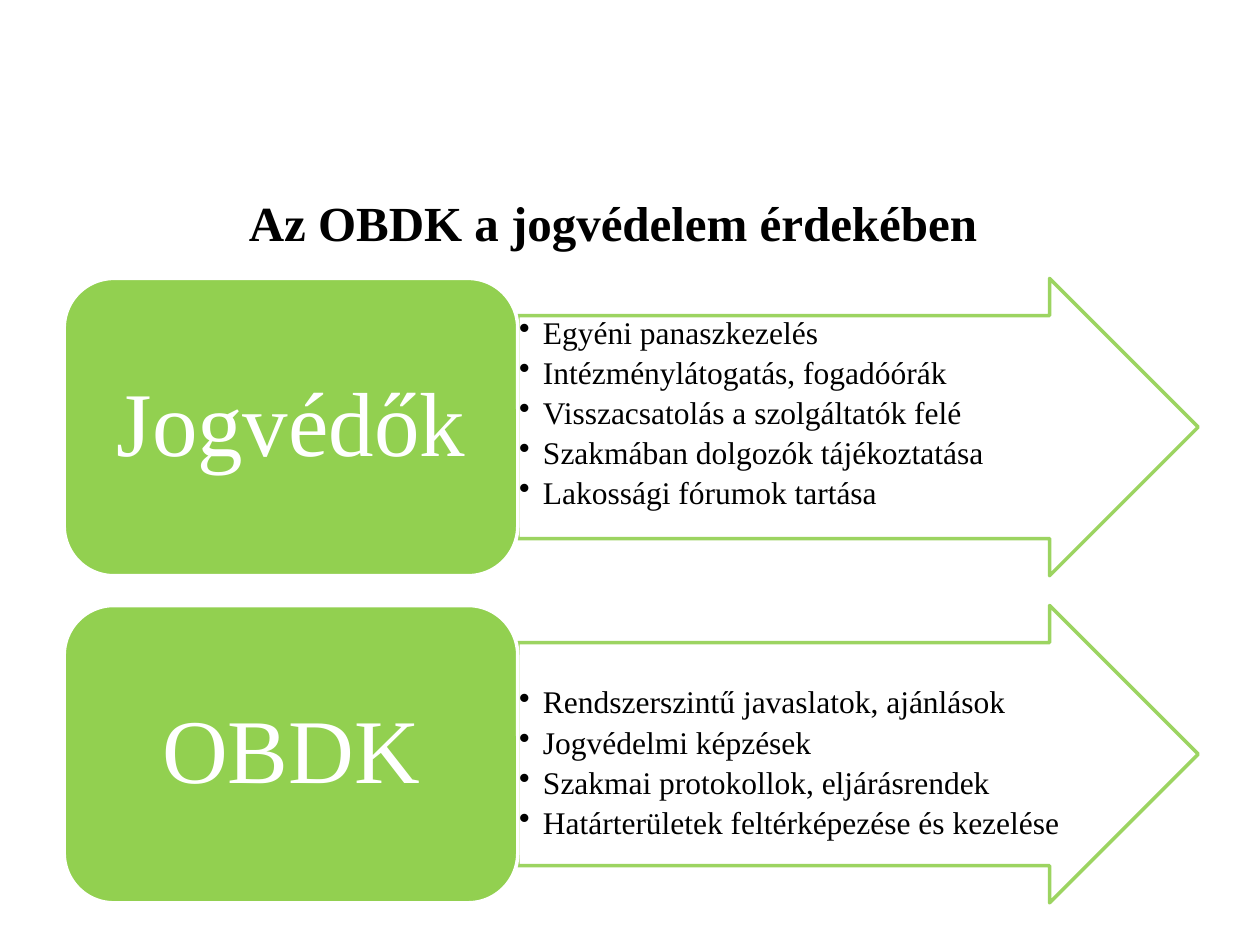
import pptx
import pptx.dml.color
import pptx.enum.shapes
import pptx.enum.text
import pptx.util
from lxml import etree
from pptx.oxml.ns import qn

RGBColor = pptx.dml.color.RGBColor
GREEN = RGBColor(0x92, 0xD0, 0x50)
WHITE = RGBColor(0xFF, 0xFF, 0xFF)
BLACK = RGBColor(0x00, 0x00, 0x00)

SHAPE = pptx.enum.shapes.MSO_SHAPE
ALIGN = pptx.enum.text.PP_ALIGN
ANCHOR = pptx.enum.text.MSO_ANCHOR

# The grid has 100 columns and 75 rows, each a tenth of an inch
UNIT = 0.1
LEFT, TOP = 5.1, 22.1
LABEL_WIDTH, ARROW_WIDTH, HEIGHT = 36, 54, 23.6
PITCH = 1.1 * HEIGHT

# Label, list items, inset above the list in inches
GROUPS = [
    ("Jogvédők", ["Egyéni panaszkezelés",
                  "Intézménylátogatás, fogadóórák",
                  "Visszacsatolás a szolgáltatók felé",
                  "Szakmában dolgozók tájékoztatása",
                  "Lakossági fórumok tartása"], 0.01),
    ("OBDK", ["Rendszerszintű javaslatok, ajánlások",
              "Jogvédelmi képzések",
              "Szakmai protokollok, eljárásrendek",
              "Határterületek feltérképezése és kezelése"], 0.35),
]


class SlideBuilder:
    font = "Times New Roman"

    def __init__(self, deck):
        self.page = deck.slides.add_slide(deck.slide_layouts[5])

    def place(self, *cells):
        return [pptx.util.Inches(cell * UNIT) for cell in cells]

    def add_span(self, para, text, size, color, bold=False):
        span = para.add_run()
        span.text = text
        span.font.name = self.font
        span.font.size = pptx.util.Pt(size)
        span.font.bold = bold
        span.font.color.rgb = color

    def title(self, text, *cells):
        box = self.page.shapes.title
        box.left, box.top, box.width, box.height = self.place(*cells)
        box.text_frame.vertical_anchor = ANCHOR.MIDDLE
        para = box.text_frame.paragraphs[0]
        para.alignment = ALIGN.CENTER
        self.add_span(para, text, 28, BLACK, bold=True)

    def block(self, kind, cells, fill, line, anchor, insets):
        box = self.page.shapes.add_shape(kind, *self.place(*cells))
        box.shadow.inherit = False
        box.fill.solid()
        box.fill.fore_color.rgb = fill
        box.line.color.rgb = line
        box.line.width = pptx.util.Pt(2)
        frame = box.text_frame
        frame.word_wrap = True
        frame.vertical_anchor = anchor
        (frame.margin_left, frame.margin_top,
         frame.margin_right, frame.margin_bottom) = map(pptx.util.Inches, insets)
        return box

    def label(self, text, *cells):
        box = self.block(SHAPE.ROUNDED_RECTANGLE, cells, GREEN, WHITE,
                         ANCHOR.MIDDLE, (0.22, 0.11, 0.22, 0.11))
        para = box.text_frame.paragraphs[0]
        para.alignment = ALIGN.CENTER
        para.line_spacing = 0.9
        self.add_span(para, text, 52, WHITE)

    def list_arrow(self, items, top_inset, *cells):
        box = self.block(SHAPE.RIGHT_ARROW, cells, WHITE, GREEN,
                         ANCHOR.TOP, (0.01, top_inset, 0.01, 0.01))
        box.adjustments[0] = 0.75
        box.adjustments[1] = 0.5
        # Fill and line are 90 % opaque
        for color in box.element.spPr.iter(qn("a:srgbClr")):
            etree.SubElement(color, qn("a:alpha"), val="90000")
        frame = box.text_frame
        for index, item in enumerate(items):
            para = frame.add_paragraph() if index else frame.paragraphs[0]
            self.bullet(para)
            self.add_span(para, item, 18, BLACK)

    def bullet(self, para):
        para.level = 1
        para.alignment = ALIGN.LEFT
        para.line_spacing = 0.9
        para.space_after = pptx.util.Pt(3.5)
        indent = pptx.util.Inches(0.19)
        properties = para._p.get_or_add_pPr()
        properties.set("marL", str(indent))
        properties.set("indent", str(-indent))
        etree.SubElement(properties, qn("a:buChar"), char="•")


def main():
    deck = pptx.Presentation()
    deck.slide_width = pptx.util.Inches(10)
    deck.slide_height = pptx.util.Inches(7.5)
    builder = SlideBuilder(deck)

    # Title
    builder.title("Az OBDK a jogvédelem érdekében", 2.2, 14.4, 92.9, 6.4)

    # One row per group: arrow with its list, then the label
    for row, (name, items, top_inset) in enumerate(GROUPS):
        top = TOP + row * PITCH
        builder.list_arrow(items, top_inset,
                           LEFT + LABEL_WIDTH, top, ARROW_WIDTH, HEIGHT)
        builder.label(name, LEFT, top, LABEL_WIDTH, HEIGHT)

    deck.save("out.pptx")


if __name__ == "__main__":
    main()
